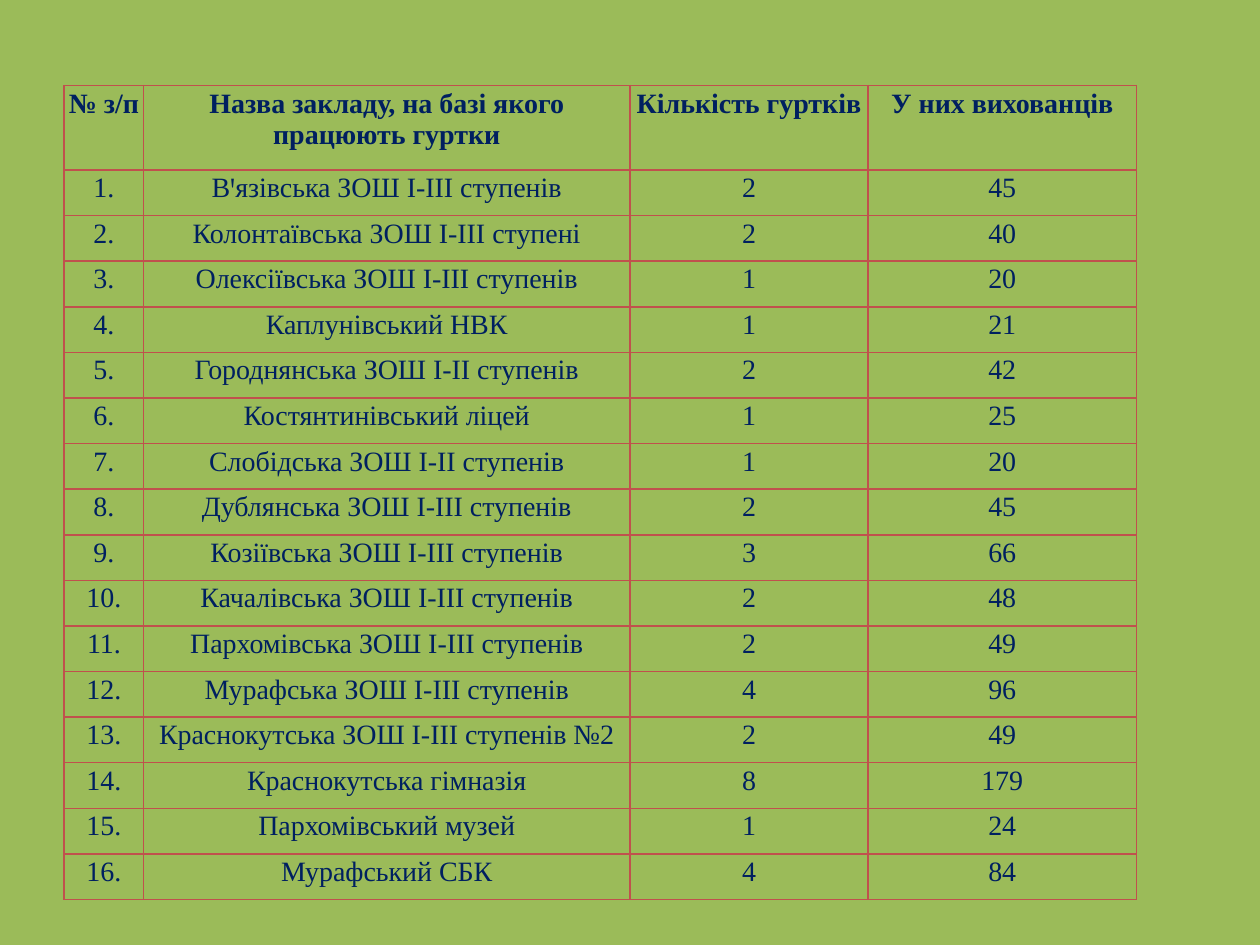
from lxml import etree
from pptx import Presentation
from pptx.dml.color import RGBColor as RGB
from pptx.enum.text import MSO_ANCHOR as Anchor, PP_ALIGN as Align
from pptx.oxml.ns import qn
from pptx.util import Inches, Pt

COLORS = {"back": "9BBB59", "text": "002060", "line": "C0504D"}
HEADS = ["№ з/п", "Назва закладу, на базі якого працюють гуртки",
         "Кількість гуртків", "У них вихованців"]
SCHOOLS = [
    ("Вꞌязівська ЗОШ І-ІІІ ступенів", 2, 45),
    ("Колонтаївська ЗОШ І-ІІІ ступені", 2, 40),
    ("Олексіївська ЗОШ І-ІІІ ступенів", 1, 20),
    ("Каплунівський НВК", 1, 21),
    ("Городнянська ЗОШ І-ІІ ступенів", 2, 42),
    ("Костянтинівський ліцей", 1, 25),
    ("Слобідська ЗОШ І-ІІ ступенів", 1, 20),
    ("Дублянська ЗОШ І-ІІІ ступенів", 2, 45),
    ("Козіївська ЗОШ І-ІІІ ступенів", 3, 66),
    ("Качалівська ЗОШ І-ІІІ ступенів", 2, 48),
    ("Пархомівська ЗОШ І-ІІІ ступенів", 2, 49),
    ("Мурафська ЗОШ І-ІІІ ступенів", 4, 96),
    ("Краснокутська ЗОШ І-ІІІ ступенів №2", 2, 49),
    ("Краснокутська гімназія", 8, 179),
    ("Пархомівський музей", 1, 24),
    ("Мурафський СБК", 4, 84),
]
WIDTHS = [0.63, 3.86, 1.89, 2.13]
HEAD_H, BODY_H = Inches(0.67), Inches(5.79)
PAD = Inches(0.02)
CELL = {"margin_left": PAD, "margin_right": PAD, "margin_top": PAD,
        "margin_bottom": PAD, "vertical_anchor": Anchor.TOP}
FONT = {"name": "Times New Roman", "size": Pt(16)}


def set_all(item, values):
    for name, value in values.items():
        setattr(item, name, value)


def add_edges(cell):
    """Draw a thin line on all four sides of a table cell."""
    props = cell._tc.get_or_add_tcPr()
    for i, side in enumerate(["lnL", "lnR", "lnT", "lnB"]):
        line = etree.Element(qn(f"a:{side}"), w=str(Pt(1)))
        fill = etree.SubElement(line, qn("a:solidFill"))
        etree.SubElement(fill, qn("a:srgbClr"), val=COLORS["line"])
        props.insert(i, line)


prs = Presentation()
prs.slide_width, prs.slide_height = Inches(10), Inches(7.5)
slide = prs.slides.add_slide(prs.slide_layouts[6])
back = slide.background.fill
back.solid()
back.fore_color.rgb = RGB.from_string(COLORS["back"])

rows = [HEADS] + [(f"{n}.", *school) for n, school in enumerate(SCHOOLS, 1)]
table = slide.shapes.add_table(
    len(rows), len(WIDTHS), Inches(0.51), Inches(0.68),
    Inches(sum(WIDTHS)), HEAD_H + BODY_H).table
table.horz_banding = False
for col, width in zip(table.columns, WIDTHS):
    col.width = Inches(width)

for r, row in enumerate(rows):
    table.rows[r].height = BODY_H // len(SCHOOLS) if r else HEAD_H
    for c, value in enumerate(row):
        cell = table.cell(r, c)
        set_all(cell, CELL)
        cell.fill.background()
        add_edges(cell)
        para = cell.text_frame.paragraphs[0]
        para.alignment = Align.CENTER
        run = para.add_run()
        run.text = str(value)
        set_all(run.font, FONT)
        run.font.bold = r == 0
        run.font.color.rgb = RGB.from_string(COLORS["text"])

prs.save("out.pptx")
